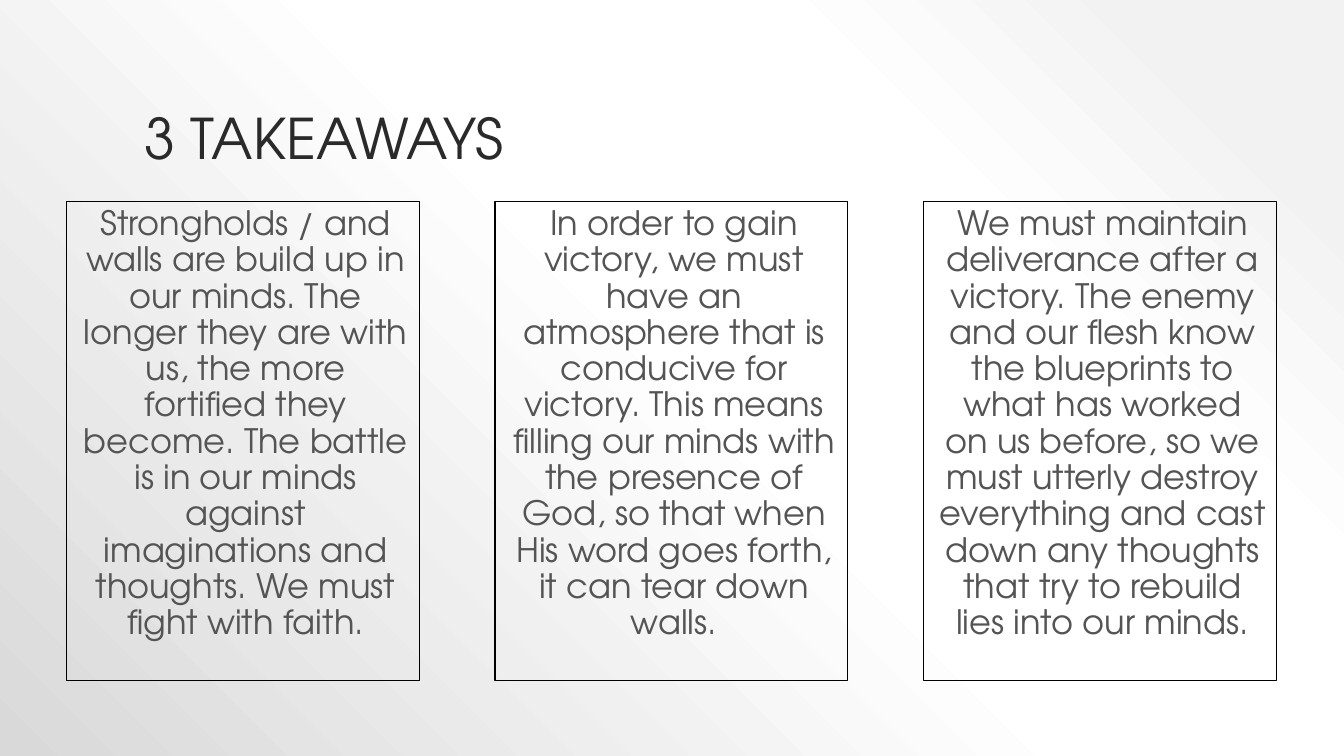
import pptx
import pptx.dml.color
import pptx.enum.shapes
import pptx.enum.text
import pptx.oxml
import pptx.oxml.ns
import pptx.util

WIDTH, HEIGHT = 13.33, 7.5
FONT = "TeX Gyre Adventor"
GRADIENT = [(10, "F2F2F2"), (28, "FFFFFF"), (48, "FFFFFF"), (100, "D9D9D9")]
TAKEAWAYS = [
    "Strongholds / and walls are build up in our minds. The longer they are "
    "with us, the more fortified they become. The battle is in our minds "
    "against imaginations and thoughts. We must fight with faith.",
    "In order to gain victory, we must have an atmosphere that is conducive "
    "for victory. This means filling our minds with the presence of God, so "
    "that when His word goes forth, it can tear down walls.",
    "We must maintain deliverance after a victory. The enemy and our flesh "
    "know the blueprints to what has worked on us before, so we must utterly "
    "destroy everything and cast down any thoughts that try to rebuild lies "
    "into our minds.",
]


def color(value):
    return pptx.dml.color.RGBColor.from_string(value)


def inches(*lengths):
    return [pptx.util.Inches(length) for length in lengths]


def paint_background(page):
    """Give the page a circular gradient centred on its top right corner."""
    stops = "".join(
        f'<a:gs pos="{share * 1000}"><a:srgbClr val="{value}"/></a:gs>'
        for share, value in GRADIENT)
    background = pptx.oxml.parse_xml(
        f'<p:bg {pptx.oxml.ns.nsdecls("p", "a")}><p:bgPr>'
        f'<a:gradFill rotWithShape="1"><a:gsLst>{stops}</a:gsLst>'
        '<a:path path="circle"><a:fillToRect l="100000" b="100000"/></a:path>'
        '</a:gradFill><a:effectLst/></p:bgPr></p:bg>')
    page.element.cSld.insert(0, background)


def write(frame, text, size, text_color, anchor, align):
    frame.word_wrap = True
    frame.vertical_anchor = anchor
    para = frame.paragraphs[0]
    para.alignment = align
    para.line_spacing = 0.9
    span = para.add_run()
    span.text = text
    span.font.size = pptx.util.Pt(size)
    span.font.name = FONT
    span.font.color.rgb = color(text_color)
    return para


def add_title(page, box, text):
    title = page.shapes.add_textbox(*inches(*box))
    write(title.text_frame, text, 40, "2A2A2A",
          pptx.enum.text.MSO_ANCHOR.BOTTOM, pptx.enum.text.PP_ALIGN.LEFT)


def add_card(page, box, text):
    card = page.shapes.add_shape(
        pptx.enum.shapes.MSO_SHAPE.RECTANGLE, *inches(*box))
    card.shadow.inherit = False
    card.fill.background()
    card.line.color.rgb = color("000000")
    card.line.width = pptx.util.Pt(0.75)
    para = write(card.text_frame, text, 24, "545454",
                 pptx.enum.text.MSO_ANCHOR.TOP, pptx.enum.text.PP_ALIGN.CENTER)
    para.space_before = pptx.util.Pt(18)
    properties = para._p.get_or_add_pPr()
    properties.set("marL", str(pptx.util.Inches(0.05)))
    properties.set("indent", "0")


def add_cards(page, box, texts, card_width):
    """Spread equal cards across the box, from its left to its right edge."""
    left, top, width, height = box
    pitch = (width - card_width) / (len(texts) - 1)
    for column, text in enumerate(texts):
        add_card(page, (left + column * pitch, top, card_width, height), text)


def main():
    deck = pptx.Presentation()
    deck.slide_width, deck.slide_height = inches(WIDTH, HEIGHT)
    page = deck.slides.add_slide(deck.slide_layouts[6])
    paint_background(page)
    add_title(page, (WIDTH * 0.1, HEIGHT * 0.04, WIDTH * 0.8, 1.45),
              "3 TAKEAWAYS")
    add_cards(page, (0.66, 2, 12, 4.75), TAKEAWAYS, 3.5)
    deck.save("out.pptx")


if __name__ == "__main__":
    main()
